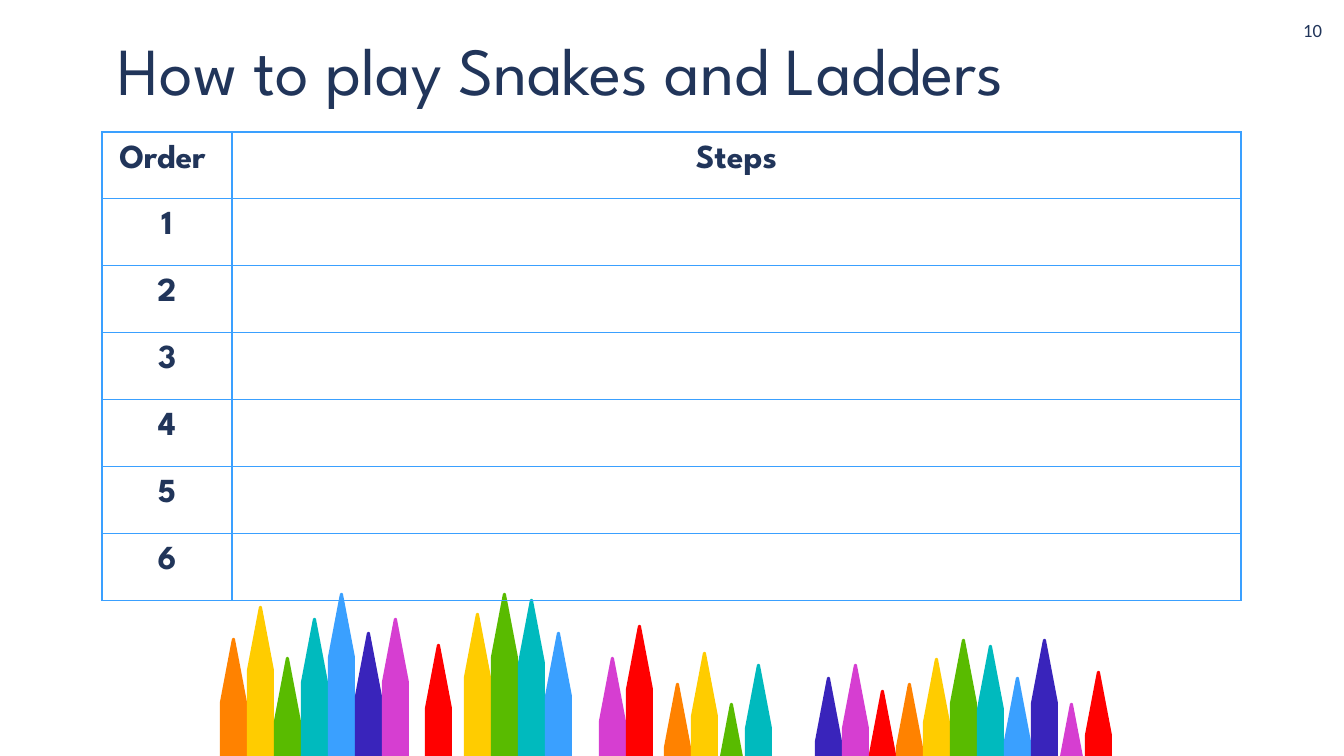
from dataclasses import dataclass
from itertools import cycle, islice

from lxml.etree import SubElement
from pptx import Presentation
from pptx.dml.color import RGBColor
from pptx.enum.text import MSO_ANCHOR, PP_ALIGN
from pptx.oxml.ns import qn
from pptx.util import Emu, Pt

EMU_PER_PX = 914400 / 134.4
COLORS = {
    "orange": "FF8200",
    "yellow": "FFCC00",
    "green": "59BB00",
    "teal": "00BABE",
    "blue": "3AA0FF",
    "indigo": "3924BB",
    "magenta": "D63ED1",
    "red": "FF0000",
    "navy": "21355A",
}
PENCIL_COLORS = ["orange", "yellow", "green", "teal", "blue", "indigo", "magenta", "red"]
PENCIL_PITCH = 27
PENCIL_OUTLINE = [
    (27, 64), (15, 1), (14, 0), (13, 0), (12, 1), (0, 64),
    (0, 583), (6, 586), (14, 587), (21, 586), (27, 583),
]
HEADINGS = ["Order ", "Steps"]
STEP_COUNT = 6
COLUMN_WIDTHS = [130, 1009]
HEADER_HEIGHT, STEP_HEIGHT = 58, 67
CELL_MARGIN = 13
BORDER_WIDTH = Pt(0.75)


@dataclass(frozen=True)
class PencilRow:
    """Neighbouring pencils: left edge, first colour and the height of each tip."""
    left: int
    first_color: str
    tops: tuple[int, ...]


@dataclass(frozen=True)
class Label:
    """A single line of text in a box without margins."""
    text: str
    left: int
    top: int
    width: int
    height: int
    font: str
    size: int
    align: PP_ALIGN
    anchor: MSO_ANCHOR
    line_spacing: float


PENCIL_ROWS = [
    PencilRow(220, "orange", (638, 606, 657, 618, 593, 632, 618)),
    PencilRow(425, "red", (644,)),
    PencilRow(464, "yellow", (613, 593, 599, 632)),
    PencilRow(599, "magenta", (657, 625)),
    PencilRow(664, "orange", (683, 652, 703, 664)),
    PencilRow(815, "indigo", (677, 664, 690, 683, 658, 639, 645, 677, 639, 703, 671)),
]
LABELS = [
    Label("How to play Snakes and Ladders", 118, 43, 1015, 67, "League Spartan", 36,
          PP_ALIGN.LEFT, MSO_ANCHOR.BOTTOM, 0.9),
    Label("10", 1274, 19, 48, 40, "Calibri", 10, PP_ALIGN.RIGHT, MSO_ANCHOR.TOP, 1.0),
]


def px(length: int) -> Emu:
    """Turn pixels into EMU."""
    return Emu(round(length * EMU_PER_PX))


def color(name: str) -> RGBColor:
    """Look up a named colour."""
    return RGBColor.from_string(COLORS[name])


def format_paragraph(para, font: str, size: int, align: PP_ALIGN, bold: bool = False) -> None:
    """Align a paragraph and format its runs."""
    para.alignment = align
    for span in para.runs:
        span.font.name = font
        span.font.size = Pt(size)
        span.font.bold = bold
        span.font.color.rgb = color("navy")


def draw_pencils(group, row: PencilRow) -> None:
    """Draw one row of pencils, taking the colours in turn."""
    first = PENCIL_COLORS.index(row.first_color)
    names = islice(cycle(PENCIL_COLORS), first, None)
    for index, (top, name) in enumerate(zip(row.tops, names)):
        left = row.left + index * PENCIL_PITCH
        points = [(left + x, top + y) for x, y in PENCIL_OUTLINE]
        builder = group.shapes.build_freeform(*points[0], scale=EMU_PER_PX)
        builder.add_line_segments(points[1:], close=True)
        pencil = builder.convert_to_shape()
        pencil.shadow.inherit = False
        pencil.fill.solid()
        pencil.fill.fore_color.rgb = color(name)
        pencil.line.fill.background()


def draw_label(page, label: Label) -> None:
    """Draw a text box."""
    box = page.shapes.add_textbox(*map(px, (label.left, label.top, label.width, label.height)))
    frame = box.text_frame
    frame.text = label.text
    frame.word_wrap = True
    frame.vertical_anchor = label.anchor
    frame.margin_left = frame.margin_right = frame.margin_top = frame.margin_bottom = 0
    para = frame.paragraphs[0]
    para.line_spacing = label.line_spacing
    format_paragraph(para, label.font, label.size, label.align)


def style_cell(cell) -> None:
    """Give a cell blue borders and no fill."""
    properties = cell._tc.get_or_add_tcPr()
    for side in ("a:lnL", "a:lnR", "a:lnT", "a:lnB"):
        border = SubElement(properties, qn(side), w=str(BORDER_WIDTH))
        fill = SubElement(border, qn("a:solidFill"))
        SubElement(fill, qn("a:srgbClr"), val=COLORS["blue"])
    cell.fill.background()


def write_cell(cell, text: str) -> None:
    """Write bold centred text into a cell."""
    cell.text_frame.text = text
    cell.margin_left = cell.margin_right = px(CELL_MARGIN)
    cell.margin_top = cell.margin_bottom = px(CELL_MARGIN)
    format_paragraph(cell.text_frame.paragraphs[0], "League Spartan", 18, PP_ALIGN.CENTER, True)


def draw_steps_table(page) -> None:
    """Draw the table of numbered, empty steps."""
    heights = [HEADER_HEIGHT] + [STEP_HEIGHT] * STEP_COUNT
    table = page.shapes.add_table(
        len(heights), len(COLUMN_WIDTHS),
        px(102), px(132), px(sum(COLUMN_WIDTHS)), px(sum(heights)),
    ).table
    table.first_row = table.horz_banding = False
    for column, width in zip(table.columns, COLUMN_WIDTHS):
        column.width = px(width)
    for row, height in zip(table.rows, heights):
        row.height = px(height)
    for cell in table.iter_cells():
        style_cell(cell)
    for index, heading in enumerate(HEADINGS):
        write_cell(table.cell(0, index), heading)
    for step in range(1, STEP_COUNT + 1):
        write_cell(table.cell(step, 0), str(step))


def main() -> None:
    """Build the slide and save it."""
    deck = Presentation()
    deck.slide_width, deck.slide_height = px(1344), px(756)
    page = deck.slides.add_slide(deck.slide_layouts[6])
    group = page.shapes.add_group_shape()
    for row in PENCIL_ROWS:
        draw_pencils(group, row)
    for label in LABELS:
        draw_label(page, label)
    draw_steps_table(page)
    deck.save("out.pptx")


if __name__ == "__main__":
    main()
